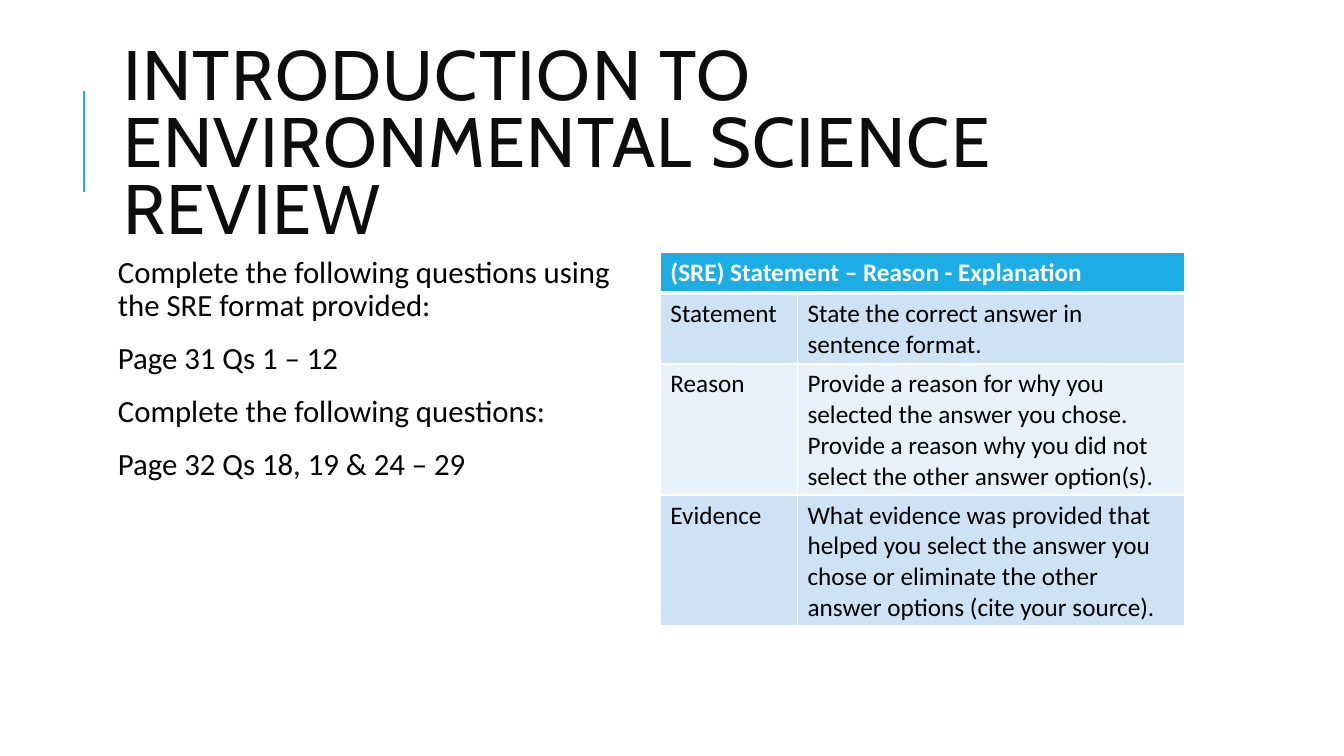
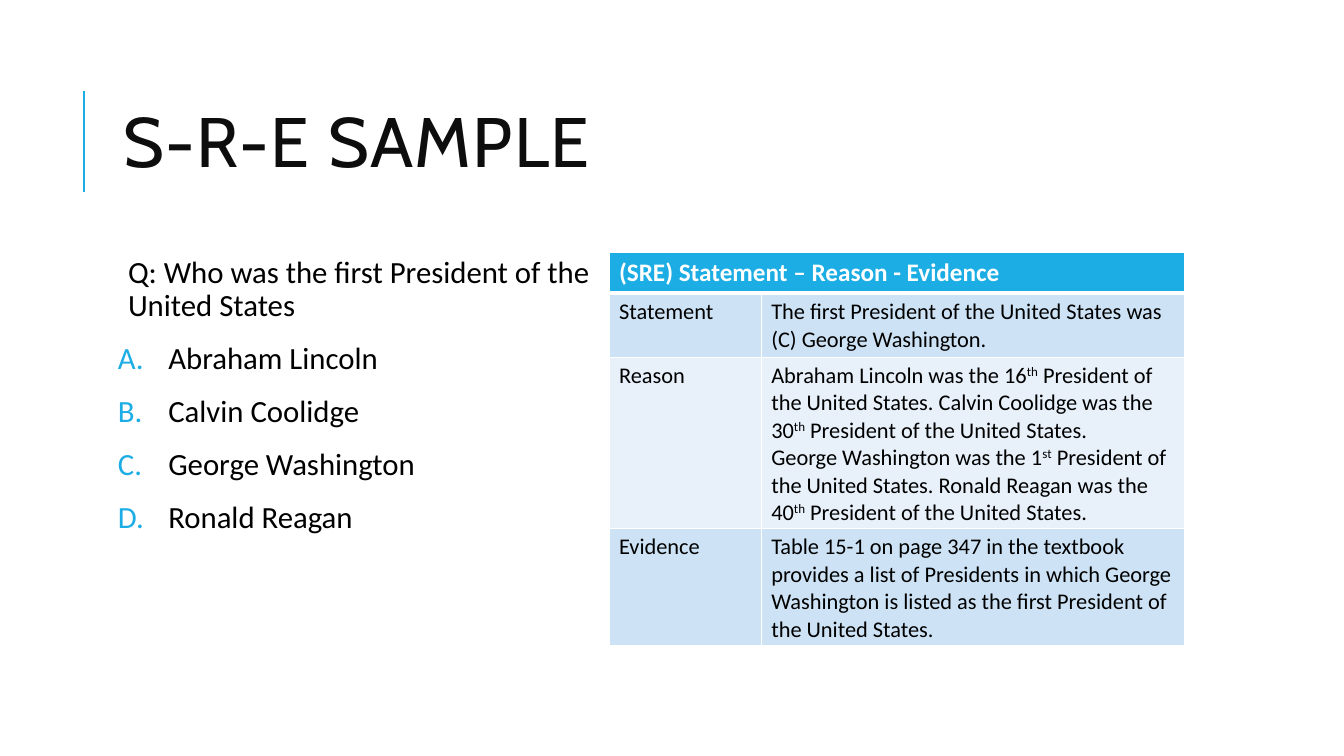
from lxml.etree import SubElement
from pptx import Presentation
from pptx.dml.color import RGBColor
from pptx.enum.shapes import MSO_CONNECTOR
from pptx.enum.text import MSO_ANCHOR, MSO_AUTO_SIZE, PP_ALIGN
from pptx.oxml import parse_xml
from pptx.oxml.ns import nsdecls, qn
from pptx.util import Inches, Pt

ACCENT, WHITE, BLACK, TITLE_INK = "1CADE4", "FFFFFF", "000000", "0D0D0D"
BANDS = ("CDE3F5", "E8F1FA")

LEFT, RIGHT, BODY_TOP = 1.12, 11.75, 2.5
BODY_W, BODY_H, ROW_H = 5.2, 4.4, 0.41
RULE_X, RULE_TOP, RULE_BOTTOM = 0.83, 0.9, 1.9

TITLE_FONT = dict(name="Cabin", size=Pt(50), bold=False)
BODY_FONT = dict(name="Calibri", size=Pt(22))
HEAD_FONT = dict(name="Calibri", size=Pt(18), bold=True)

# Body lines are (kind, text); text between ^ marks is superscript.
SLIDES = [
    dict(
        title="INTRODUCTION TO ENVIRONMENTAL SCIENCE\vREVIEW",
        body=[
            ("plain", "Complete the following questions using the SRE format provided:"),
            ("plain", "Page 31 Qs 1 – 12"),
            ("plain", "Complete the following questions:"),
            ("plain", "Page 32 Qs 18, 19 & 24 – 29"),
        ],
        head="(SRE) Statement – Reason - Explanation",
        rows=[
            ("Statement", ["State the correct answer in sentence format."]),
            ("Reason", ["Provide a reason for why you selected the answer you chose. "
                        "Provide a reason why you did not select the other answer option(s)."]),
            ("Evidence", ["What evidence was provided that helped you select the answer you "
                          "chose or eliminate the other answer options (cite your source)."]),
        ],
        cols=(1.36, 3.84),
        cell_size=18,
    ),
    dict(
        title="S-R-E SAMPLE",
        body=[
            ("question", "Q: Who was the first President of the United States"),
            ("choice", "Abraham Lincoln"),
            ("choice", "Calvin Coolidge"),
            ("choice", "George Washington"),
            ("choice", "Ronald Reagan"),
        ],
        head="(SRE) Statement – Reason - Evidence",
        rows=[
            ("Statement", ["The first President of the United States was (C) George Washington."]),
            ("Reason", ["Abraham Lincoln was the 16^th^ President of the United States. "
                        "Calvin Coolidge was the 30^th^ President of the United States.",
                        "George Washington was the 1^st^ President of the United States. "
                        "Ronald Reagan was the 40^th^ President of the United States."]),
            ("Evidence", ["Table 15-1 on page 347 in the textbook provides a list of Presidents "
                          "in which George Washington is listed as the first President of the "
                          "United States."]),
        ],
        cols=(1.51, 4.2),
        cell_size=16,
    ),
]


def rgb(color):
    return RGBColor.from_string(color)


def set_font(font, style, color):
    for key, value in style.items():
        setattr(font, key, value)
    font.color.rgb = rgb(color)


def add_rule(s):
    line = s.shapes.add_connector(MSO_CONNECTOR.STRAIGHT, Inches(RULE_X), Inches(RULE_BOTTOM),
                                  Inches(RULE_X), Inches(RULE_TOP))
    line.line.color.rgb = rgb(ACCENT)
    line.line.width = Pt(1.5)
    SubElement(line._element.spPr, qn("a:effectLst"))


def set_title(s, text):
    sp = s.shapes.title
    sp.left, sp.top = Inches(LEFT), Inches(0.64)
    sp.width, sp.height = Inches(RIGHT - LEFT), Inches(1.64)
    tf = sp.text_frame
    tf.auto_size, tf.vertical_anchor = MSO_AUTO_SIZE.NONE, MSO_ANCHOR.MIDDLE
    p = tf.paragraphs[0]
    p.text = text
    p.alignment, p.line_spacing = PP_ALIGN.LEFT, 0.8
    for r in p.runs:
        set_font(r.font, TITLE_FONT, TITLE_INK)
        r._r.get_or_add_rPr().set("spc", "100")


def set_indent(p, kind):
    """Indent a question; give a choice a hanging, coloured letter."""
    pPr = p._p.get_or_add_pPr()
    if kind == "question":
        pPr.set("marL", str(Inches(0.1)))
    elif kind == "choice":
        pPr.set("marL", str(Inches(0.5)))
        pPr.set("indent", str(-Inches(0.5)))
        color = SubElement(pPr, qn("a:buClr"))
        SubElement(color, qn("a:srgbClr"), val=ACCENT)
        SubElement(pPr, qn("a:buAutoNum"), type="alphaUcPeriod")


def add_body(s, lines):
    box = s.shapes.add_textbox(Inches(LEFT), Inches(BODY_TOP), Inches(BODY_W), Inches(BODY_H))
    tf = box.text_frame
    tf.word_wrap = True
    for side in ("left", "right", "top", "bottom"):
        setattr(tf, f"margin_{side}", Inches(0.05))
    for i, (kind, text) in enumerate(lines):
        p = tf.add_paragraph() if i else tf.paragraphs[0]
        set_indent(p, kind)
        p.line_spacing, p.space_after = 0.9, Pt(2)
        p.space_before = Pt(12 if i else 0)
        r = p.add_run()
        r.text = text
        set_font(r.font, BODY_FONT, BLACK)


def set_borders(cell, top, bottom):
    """Draw white cell borders; top and bottom are widths in points."""
    tcPr = cell._tc.get_or_add_tcPr()
    for i, (side, width) in enumerate(zip("LRTB", (1, 1, top, bottom))):
        tcPr.insert(i, parse_xml(
            f'<a:ln{side} {nsdecls("a")} w="{Pt(width)}"><a:solidFill>'
            f'<a:srgbClr val="{WHITE}"/></a:solidFill></a:ln{side}>'))


def fill_cell(cell, paragraphs, fill, style, color):
    cell.fill.solid()
    cell.fill.fore_color.rgb = rgb(fill)
    tf = cell.text_frame
    for i, text in enumerate(paragraphs):
        p = tf.add_paragraph() if i else tf.paragraphs[0]
        for n, part in enumerate(text.split("^")):
            r = p.add_run()
            r.text = part
            set_font(r.font, style, color)
            if n % 2:
                r._r.get_or_add_rPr().set("baseline", "30000")


def add_sre_table(s, head, rows, cols, cell_size):
    width = sum(cols)
    table = s.shapes.add_table(len(rows) + 1, len(cols), Inches(RIGHT - width), Inches(BODY_TOP),
                               Inches(width), Inches(ROW_H * (len(rows) + 1))).table
    for column, col_width in zip(table.columns, cols):
        column.width = Inches(col_width)
    for row in table.rows:
        row.height = Inches(ROW_H)
    table.cell(0, 0).merge(table.cell(0, 1))
    fill_cell(table.cell(0, 0), [head], ACCENT, HEAD_FONT, WHITE)
    cell_font = {**HEAD_FONT, "size": Pt(cell_size), "bold": False}
    for i, (label, paragraphs) in enumerate(rows):
        for j, content in enumerate(([label], paragraphs)):
            fill_cell(table.cell(i + 1, j), content, BANDS[i % 2], cell_font, BLACK)
    for i, row in enumerate(table.rows):
        for cell in row.cells:
            set_borders(cell, top=3 if i == 1 else 1, bottom=3 if i == 0 else 1)


def main():
    prs = Presentation()
    prs.slide_width, prs.slide_height = Inches(13.33), Inches(7.5)
    for content in SLIDES:
        s = prs.slides.add_slide(prs.slide_layouts[5])
        add_rule(s)
        set_title(s, content["title"])
        add_body(s, content["body"])
        add_sre_table(s, content["head"], content["rows"], content["cols"], content["cell_size"])
    prs.save("out.pptx")


if __name__ == "__main__":
    main()
